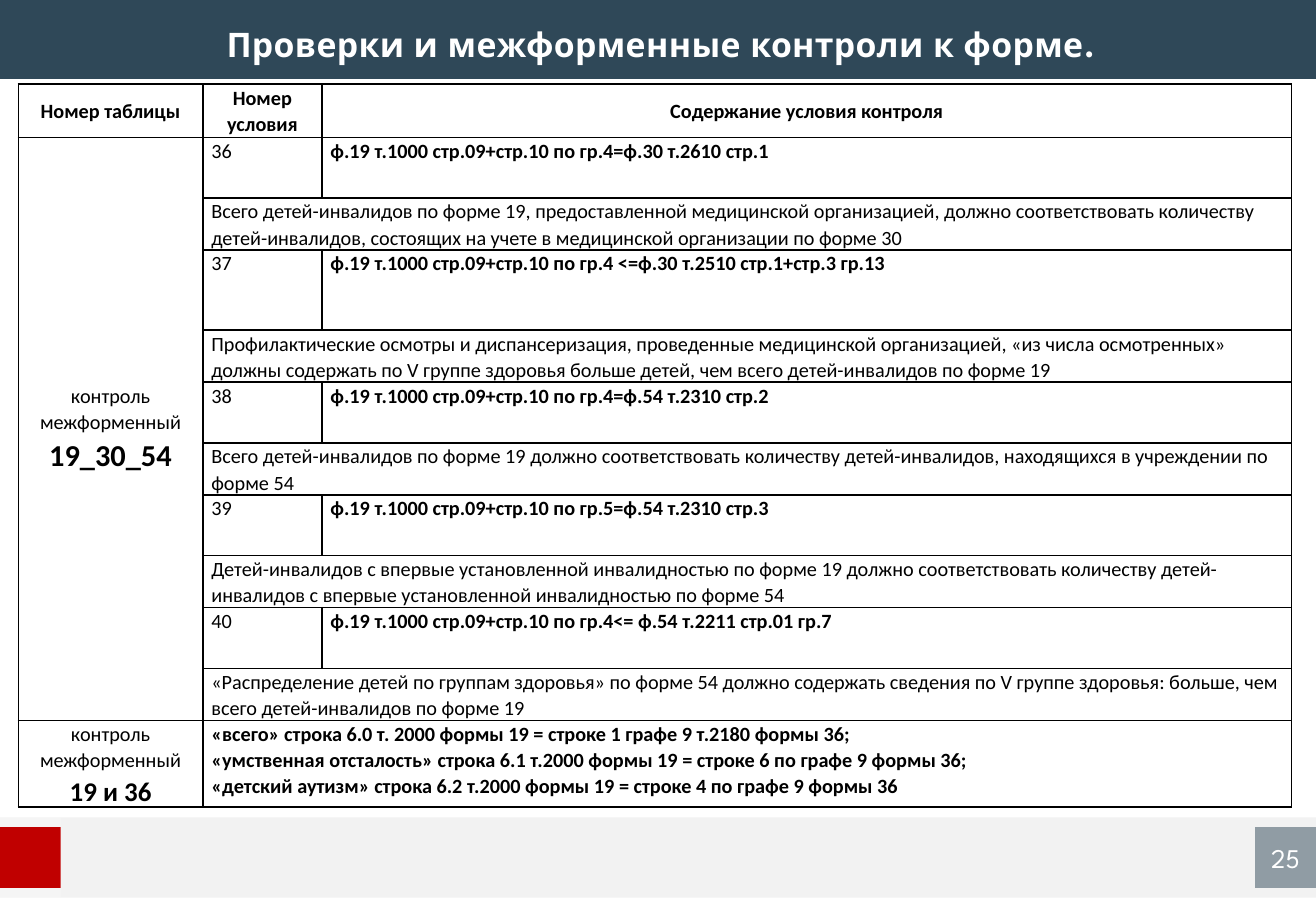
from dataclasses import dataclass
from typing import Optional

from lxml.etree import SubElement
from pptx import Presentation
from pptx.dml.color import RGBColor
from pptx.enum.shapes import MSO_SHAPE
from pptx.enum.text import MSO_ANCHOR, PP_ALIGN
from pptx.oxml.ns import qn
from pptx.util import Inches, Pt


@dataclass(frozen=True)
class Theme:
    navy: str = "2F4858"
    pale: str = "F2F2F2"
    red: str = "C00000"
    white: str = "FFFFFF"
    black: str = "000000"
    heading_font: str = "League Spartan"
    table_font: str = "Calibri"
    title_size: int = 20
    page_size: int = 16
    cell_size: int = 12
    code_size: int = 18
    small_code_size: int = 16
    border_width: int = 1
    line_spacing: float = 1.07


@dataclass(frozen=True)
class Area:
    column: float
    row: float
    columns: float
    rows: float


@dataclass(frozen=True)
class Panel:
    area: Area
    color: str
    opacity: int = 100
    text: str = ""


@dataclass(frozen=True)
class Condition:
    number: str
    formula: str
    meaning: str
    rows: float = 5


THEME = Theme()
GRID_STEP = 0.1
SLIDE_COLUMNS, SLIDE_ROWS = 108.3, 75
MARKER = 5
FOOTER_ROW, FOOTER_ROWS = 67.3, 6.6
MARKER_ROW = FOOTER_ROW + (FOOTER_ROWS - MARKER) / 2
HEADER_ROWS = 6.5

PANELS = [
    Panel(Area(0, FOOTER_ROW, SLIDE_COLUMNS, FOOTER_ROWS), THEME.pale),
    Panel(Area(0, 0, SLIDE_COLUMNS, HEADER_ROWS), THEME.navy),
    Panel(Area(0, FOOTER_ROW, MARKER, FOOTER_ROWS), THEME.white, 30),
    Panel(Area(0, MARKER_ROW, MARKER, MARKER), THEME.red),
    Panel(Area(SLIDE_COLUMNS - MARKER, MARKER_ROW, MARKER, MARKER), THEME.navy, 50, "25"),
]
TITLE = "Проверки и межформенные контроли к форме."
TITLE_AREA = Area(6.5, 0.4, 95.7, HEADER_ROWS)
TABLE_AREA = Area(1.5, 6.9, 104.8, 59.5)
TABLE_COLUMNS = [15.2, 9.8, 79.8]
HEADING_ROWS, MEANING_ROWS, TOTALS_ROWS = 4.4, 4.1, 6.2
HEADINGS = ["Номер таблицы", "Номер условия", "Содержание условия контроля"]
CONTROL = "контроль межформенный"
CONDITIONS = [
    Condition("36", "ф.19 т.1000 стр.09+стр.10 по гр.4=ф.30 т.2610 стр.1",
              "Всего детей-инвалидов по форме 19, предоставленной медицинской организацией, должно "
              "соответствовать количеству детей-инвалидов, состоящих на учете в медицинской "
              "организации по форме 30"),
    Condition("37", "ф.19 т.1000 стр.09+стр.10 по гр.4 <=ф.30 т.2510 стр.1+стр.3 гр.13",
              "Профилактические осмотры и диспансеризация, проведенные медицинской организацией, "
              "«из числа осмотренных» должны содержать по V группе здоровья больше детей, "
              "чем всего детей-инвалидов по форме 19", 6.6),
    Condition("38", "ф.19 т.1000 стр.09+стр.10 по гр.4=ф.54 т.2310 стр.2",
              "Всего детей-инвалидов по форме 19 должно соответствовать количеству "
              "детей-инвалидов, находящихся в учреждении по форме 54"),
    Condition("39", "ф.19 т.1000 стр.09+стр.10 по гр.5=ф.54 т.2310 стр.3",
              "Детей-инвалидов с впервые установленной инвалидностью по форме 19 должно "
              "соответствовать количеству детей-инвалидов с впервые установленной "
              "инвалидностью по форме 54"),
    Condition("40", "ф.19 т.1000 стр.09+стр.10 по гр.4<= ф.54 т.2211 стр.01 гр.7",
              "«Распределение детей по группам здоровья» по форме 54 должно содержать сведения "
              "по V группе здоровья: больше, чем всего детей-инвалидов по форме 19"),
]
TOTALS = [
    "«всего» строка 6.0 т. 2000 формы 19 = строке 1 графе 9 т.2180 формы 36;",
    "«умственная отсталость» строка 6.1 т.2000 формы 19 = строке 6 по графе 9 формы 36;",
    "«детский аутизм» строка 6.2 т.2000 формы 19 = строке 4 по графе 9 формы 36",
]


def steps(count: float) -> int:
    return Inches(count * GRID_STEP)


def place(area: Area) -> tuple:
    return steps(area.column), steps(area.row), steps(area.columns), steps(area.rows)


def write(frame, text: str, *, size: int = THEME.cell_size, font: str = THEME.table_font,
          color: str = THEME.black, bold: bool = False, align=PP_ALIGN.LEFT,
          line_spacing: Optional[float] = THEME.line_spacing, tracking: int = 0) -> None:
    paragraph = frame.paragraphs[-1]
    if paragraph.runs:
        paragraph = frame.add_paragraph()
    paragraph.alignment = align
    paragraph.line_spacing = line_spacing
    run = paragraph.add_run()
    run.text = text
    run.font.size = Pt(size)
    run.font.name = font
    run.font.bold = bold
    run.font.color.rgb = RGBColor.from_string(color)
    if tracking:
        run.font._element.set("spc", str(tracking))


def draw_panel(slide, panel: Panel) -> None:
    shape = slide.shapes.add_shape(MSO_SHAPE.RECTANGLE, *place(panel.area))
    shape.shadow.inherit = False
    shape.line.fill.background()
    shape.fill.solid()
    shape.fill.fore_color.rgb = RGBColor.from_string(panel.color)
    if panel.opacity < 100:
        color = shape._element.spPr.find(qn("a:solidFill"))[0]
        SubElement(color, qn("a:alpha"), val=str(panel.opacity * 1000))
    if panel.text:
        shape.text_frame.vertical_anchor = MSO_ANCHOR.MIDDLE
        write(shape.text_frame, panel.text, size=THEME.page_size, font=THEME.heading_font,
              color=THEME.white, align=PP_ALIGN.CENTER, line_spacing=None)


def draw_title(slide) -> None:
    frame = slide.shapes.add_textbox(*place(TITLE_AREA)).text_frame
    frame.word_wrap = True
    frame.vertical_anchor = MSO_ANCHOR.MIDDLE
    frame.margin_left = frame.margin_right = frame.margin_top = frame.margin_bottom = 0
    write(frame, TITLE, size=THEME.title_size, font=THEME.heading_font, color=THEME.white,
          bold=True, align=PP_ALIGN.CENTER, line_spacing=None, tracking=20)


def format_cell(cell) -> None:
    cell.margin_left = cell.margin_right = Inches(0.07)
    cell.margin_top = cell.margin_bottom = 0
    properties = cell._tc.get_or_add_tcPr()
    for side in ("lnL", "lnR", "lnT", "lnB"):
        line = SubElement(properties, qn(f"a:{side}"), w=str(Pt(THEME.border_width)))
        fill = SubElement(line, qn("a:solidFill"))
        SubElement(fill, qn("a:srgbClr"), val=THEME.black)
    cell.fill.background()


def write_control(cell, code: str, size: int) -> None:
    write(cell.text_frame, CONTROL, align=PP_ALIGN.CENTER)
    write(cell.text_frame, code, size=size, bold=True, align=PP_ALIGN.CENTER)


def draw_table(slide) -> None:
    heights = [HEADING_ROWS]
    for condition in CONDITIONS:
        heights += [condition.rows, MEANING_ROWS]
    heights.append(TOTALS_ROWS)
    last = len(heights) - 1
    table = slide.shapes.add_table(len(heights), len(TABLE_COLUMNS), *place(TABLE_AREA)).table
    table.first_row = table.horz_banding = False
    for column, width in zip(table.columns, TABLE_COLUMNS):
        column.width = steps(width)
    for row, height in zip(table.rows, heights):
        row.height = steps(height)
    for cell in table.iter_cells():
        format_cell(cell)

    for index, heading in enumerate(HEADINGS):
        cell = table.cell(0, index)
        cell.vertical_anchor = MSO_ANCHOR.MIDDLE
        write(cell.text_frame, heading, bold=True, align=PP_ALIGN.CENTER)
    control = table.cell(1, 0)
    control.merge(table.cell(last - 1, 0))
    control.vertical_anchor = MSO_ANCHOR.MIDDLE
    write_control(control, "19_30_54", THEME.code_size)
    for index, condition in enumerate(CONDITIONS):
        row = 1 + 2 * index
        write(table.cell(row, 1).text_frame, condition.number)
        write(table.cell(row, 2).text_frame, condition.formula, bold=True)
        meaning = table.cell(row + 1, 1)
        meaning.merge(table.cell(row + 1, 2))
        write(meaning.text_frame, condition.meaning)
    write_control(table.cell(last, 0), "19 и 36", THEME.small_code_size)
    totals = table.cell(last, 1)
    totals.merge(table.cell(last, 2))
    for total in TOTALS:
        write(totals.text_frame, total, bold=True, align=PP_ALIGN.JUSTIFY)


def main() -> None:
    presentation = Presentation()
    presentation.slide_width, presentation.slide_height = steps(SLIDE_COLUMNS), steps(SLIDE_ROWS)
    slide = presentation.slides.add_slide(presentation.slide_layouts[6])
    for panel in PANELS:
        draw_panel(slide, panel)
    draw_title(slide)
    draw_table(slide)
    presentation.save("out.pptx")


if __name__ == "__main__":
    main()
